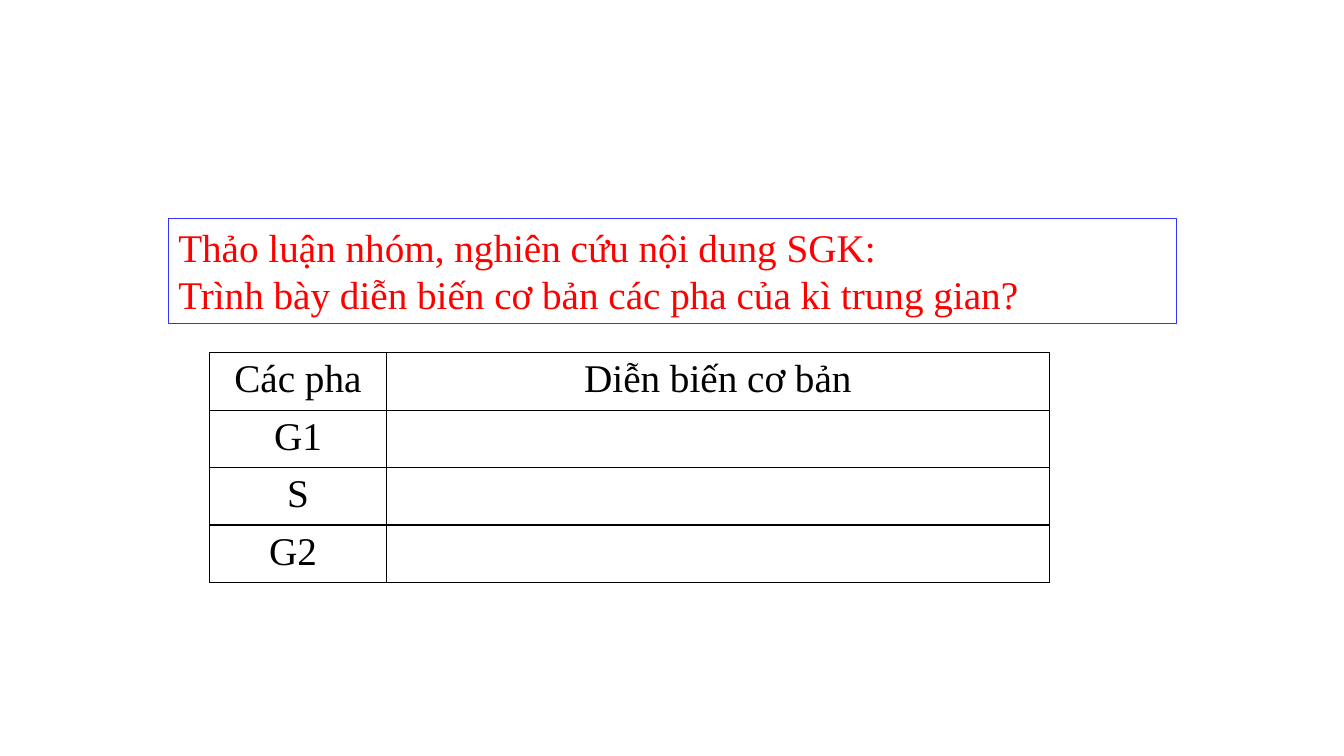
from dataclasses import dataclass

import pptx
import pptx.dml.color
import pptx.enum.shapes
import pptx.enum.text
import pptx.oxml
import pptx.oxml.ns
import pptx.util
from pptx.util import Inches

RGB = pptx.dml.color.RGBColor


@dataclass(frozen=True)
class Theme:
    font: str = "Times New Roman"
    size: int = 28
    ink: str = "000000"
    question: str = "FF0000"
    frame: str = "3333FF"
    frame_width: float = 0.75
    grid_width: float = 1


THEME = Theme()
QUESTION = [
    "Thảo luận nhóm, nghiên cứu nội dung SGK:",
    "Trình bày diễn biến cơ bản các pha của kì trung gian?",
]
PHASES = [
    ["Các pha", "Diễn biến cơ bản"],
    ["G1", ""],
    ["S", ""],
    ["G2 ", ""],
]


def format_text(frame, color, align):
    for paragraph in frame.paragraphs:
        paragraph.alignment = align
        for run in paragraph.runs:
            run.font.name = THEME.font
            run.font.size = pptx.util.Pt(THEME.size)
            run.font.bold = False
            run.font.color.rgb = RGB.from_string(color)


def add_cell_borders(cell):
    properties = cell._tc.get_or_add_tcPr()
    width = pptx.util.Pt(THEME.grid_width)
    # Borders come before the fill in the cell properties
    for index, side in enumerate(("lnL", "lnR", "lnT", "lnB")):
        border = pptx.oxml.parse_xml(
            f'<a:{side} {pptx.oxml.ns.nsdecls("a")} w="{width}">'
            f'<a:solidFill><a:srgbClr val="{THEME.ink}"/></a:solidFill></a:{side}>'
        )
        properties.insert(index, border)


def add_phase_table(slide, left, top, column_widths, row_height):
    table = slide.shapes.add_table(
        len(PHASES), len(column_widths), left, top,
        sum(column_widths), row_height * len(PHASES),
    ).table
    table.first_row = table.horz_banding = False
    for column, width in zip(table.columns, column_widths):
        column.width = width
    for row, texts in zip(table.rows, PHASES):
        row.height = row_height
        for cell, text in zip(row.cells, texts):
            cell.text_frame.text = text
            format_text(cell.text_frame, THEME.ink, pptx.enum.text.PP_ALIGN.CENTER)
            cell.fill.background()
            add_cell_borders(cell)


def add_question_box(slide, left, top, width, height):
    box = slide.shapes.add_shape(
        pptx.enum.shapes.MSO_SHAPE.RECTANGLE, left, top, width, height
    )
    box.shadow.inherit = False
    box.fill.background()
    box.line.color.rgb = RGB.from_string(THEME.frame)
    box.line.width = pptx.util.Pt(THEME.frame_width)
    frame = box.text_frame
    frame.word_wrap = True
    frame.auto_size = pptx.enum.text.MSO_AUTO_SIZE.SHAPE_TO_FIT_TEXT
    frame.vertical_anchor = pptx.enum.text.MSO_ANCHOR.TOP
    frame.text = "\n".join(QUESTION)
    format_text(frame, THEME.question, pptx.enum.text.PP_ALIGN.LEFT)


def main():
    presentation = pptx.Presentation()
    presentation.slide_width = Inches(13.33)
    presentation.slide_height = Inches(7.5)
    blank_layout = presentation.slide_layouts[6]
    slide = presentation.slides.add_slide(blank_layout)

    # Table to fill in, one row for each phase
    add_phase_table(
        slide, Inches(2.08), Inches(3.5), [Inches(1.75), Inches(6.58)], Inches(0.57)
    )
    # Framed discussion question
    add_question_box(slide, Inches(1.67), Inches(2.17), Inches(10), Inches(1.04))

    presentation.save("out.pptx")


if __name__ == "__main__":
    main()
